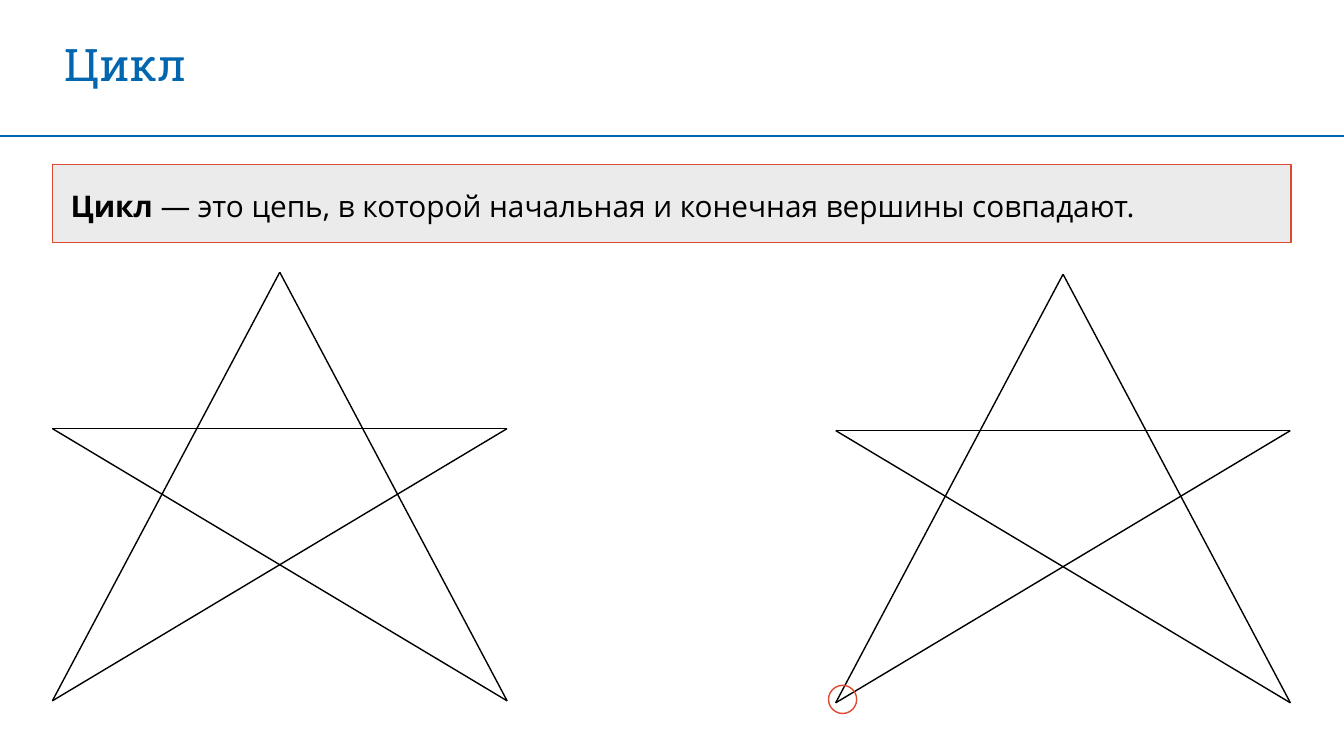
from dataclasses import dataclass
from itertools import pairwise

from lxml.etree import SubElement
from pptx import Presentation
from pptx.dml.color import RGBColor
from pptx.enum.shapes import MSO_CONNECTOR, MSO_SHAPE
from pptx.enum.text import MSO_ANCHOR, PP_ALIGN
from pptx.oxml.ns import qn
from pptx.util import Cm, Pt


@dataclass(frozen=True)
class Theme:
    blue: RGBColor = RGBColor(0x00, 0x66, 0xB0)
    red: RGBColor = RGBColor(0xDD, 0x49, 0x35)
    grey: RGBColor = RGBColor(0xD9, 0xD9, 0xD9)
    black: RGBColor = RGBColor(0x00, 0x00, 0x00)
    title_font: str = "Roboto Slab"
    body_font: str = "Open Sans"
    title_size: Pt = Pt(32)
    body_size: Pt = Pt(21.3)
    body_spacing: Pt = Pt(29.3)
    line_width: Pt = Pt(1)


class SlideBuilder:
    def __init__(self, slide, theme):
        self.slide = slide
        self.theme = theme

    def title(self, text, left, top, width, height):
        box = self.slide.shapes.add_textbox(Cm(left), Cm(top), Cm(width), Cm(height))
        box.text_frame.word_wrap = True
        paragraph = box.text_frame.paragraphs[0]
        paragraph.text = text
        paragraph.font.name = self.theme.title_font
        paragraph.font.size = self.theme.title_size
        paragraph.font.color.rgb = self.theme.blue

    def line(self, start, end, color, shapes=None):
        """Draw a straight line on the slide, or in the given group's shapes."""
        shapes = self.slide.shapes if shapes is None else shapes
        x_start, y_start, x_end, y_end = map(Cm, (*start, *end))
        connector = shapes.add_connector(
            MSO_CONNECTOR.STRAIGHT, x_start, y_start, x_end, y_end)
        connector.line.color.rgb = color
        connector.line.width = self.theme.line_width
        SubElement(connector._element.spPr, qn("a:effectLst"))

    def outlined_shape(self, kind, left, top, width, height):
        shape = self.slide.shapes.add_shape(
            kind, Cm(left), Cm(top), Cm(width), Cm(height))
        shape.shadow.inherit = False
        shape.fill.background()
        shape.line.color.rgb = self.theme.red
        shape.line.width = self.theme.line_width
        return shape

    def definition(self, term, meaning, left, top, width, height):
        shape = self.outlined_shape(MSO_SHAPE.RECTANGLE, left, top, width, height)
        shape.fill.solid()
        shape.fill.fore_color.rgb = self.theme.grey
        color = shape._element.spPr.find(qn("a:solidFill"))[0]
        SubElement(color, qn("a:alpha"), val="50000")

        frame = shape.text_frame
        frame.word_wrap = True
        frame.vertical_anchor = MSO_ANCHOR.TOP
        frame.margin_left = frame.margin_right = Cm(0.46)
        frame.margin_top = frame.margin_bottom = Cm(0.46)
        paragraph = frame.paragraphs[0]
        paragraph.alignment = PP_ALIGN.LEFT
        paragraph.line_spacing = self.theme.body_spacing
        paragraph.font.name = self.theme.body_font
        paragraph.font.size = self.theme.body_size
        paragraph.font.color.rgb = self.theme.black
        for text, bold in ((f"{term} ", True), (meaning, False)):
            run = paragraph.add_run()
            run.text = text
            run.font.bold = bold

    def star(self, left, top, width=11.46, height=10.8, arm_drop=3.94):
        """Draw a five-pointed star as one closed walk over its vertices."""
        right, bottom, arm = left + width, top + height, top + arm_drop
        start = (left, bottom)
        walk = [start, (left + width / 2, top), (right, bottom),
                (left, arm), (right, arm), start]
        group = self.slide.shapes.add_group_shape()
        for here, there in pairwise(walk):
            self.line(here, there, self.theme.black, group.shapes)

    def ring(self, left, top, diameter):
        self.outlined_shape(MSO_SHAPE.OVAL, left, top, diameter, diameter)


def main():
    presentation = Presentation()
    presentation.slide_width, presentation.slide_height = Cm(33.87), Cm(19.05)
    slide = presentation.slides.add_slide(presentation.slide_layouts[6])
    theme = Theme()
    builder = SlideBuilder(slide, theme)

    builder.title("Цикл", 1.37, 0.79, 27.48, 1.63)
    builder.line((0, 3.43), (33.87, 3.43), theme.blue)
    builder.definition(
        "Цикл", "— это цепь, в которой начальная и конечная вершины совпадают.",
        1.32, 4.14, 31.22, 1.98)
    builder.star(1.32, 6.86)
    builder.star(21.06, 6.91)
    builder.ring(20.88, 17.27, 0.71)

    presentation.save("out.pptx")


if __name__ == "__main__":
    main()
